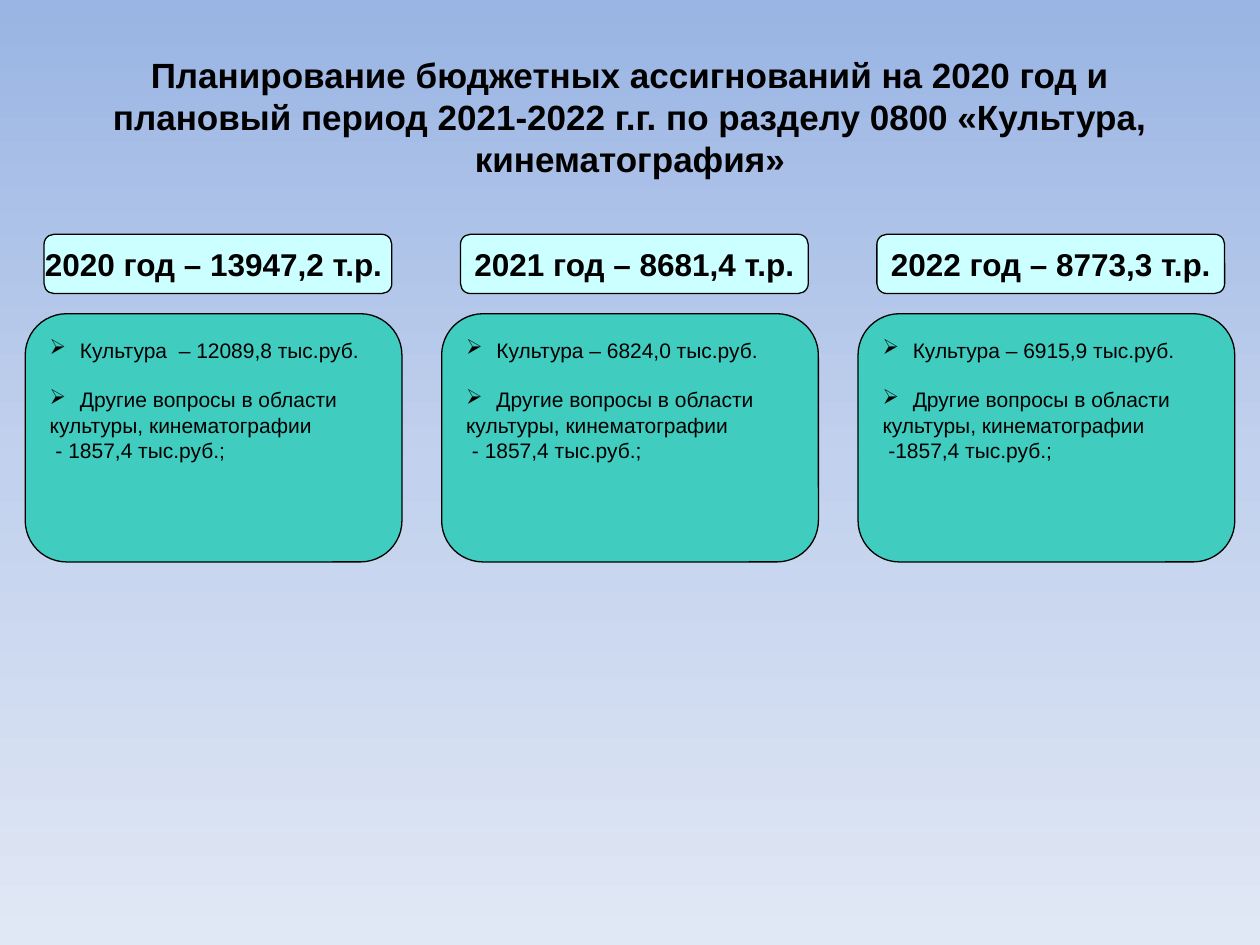
import copy

import pptx
import pptx.dml.color
import pptx.enum.shapes
import pptx.enum.text
import pptx.oxml
import pptx.oxml.ns
import pptx.util
from pptx.util import Inches

RGBColor = pptx.dml.color.RGBColor
BLACK = RGBColor(0x00, 0x00, 0x00)
PALE_CYAN = RGBColor(0xCC, 0xFF, 0xFF)
TEAL = RGBColor(0x40, 0xCC, 0xBF)
BACKGROUND_STOPS = [
    (0, RGBColor(0x9A, 0xB5, 0xE4)),
    (0.5, RGBColor(0xC2, 0xD1, 0xED)),
    (1, RGBColor(0xE1, 0xE8, 0xF5)),
]

FONT = "Arial"
ALIGN = pptx.enum.text.PP_ALIGN
ANCHOR = pptx.enum.text.MSO_ANCHOR
BULLET_INDENT = Inches(0.24)
COLUMN_LEFT = 0.2
COLUMN_STEP = 3.305

TITLE = ("Планирование бюджетных ассигнований на 2020 год и плановый период "
         "2021-2022 г.г. по разделу 0800 «Культура, кинематография»")
# Year heading, culture line, amount for other matters
YEARS = [
    ("2020 год – 13947,2 т.р. ", "Культура  – 12089,8 тыс.руб.", " - 1857,4 тыс.руб.;"),
    ("2021 год – 8681,4 т.р.", "Культура – 6824,0 тыс.руб.", " - 1857,4 тыс.руб.;"),
    ("2022 год – 8773,3 т.р.", "Культура – 6915,9 тыс.руб.", " -1857,4 тыс.руб.;"),
]


def set_background(slide):
    fill = slide.background.fill
    fill.gradient()
    fill.gradient_angle = 270
    stop_list = fill._fill._gradFill.gsLst
    stop_list.append(copy.deepcopy(stop_list[-1]))
    for stop, (position, color) in zip(fill.gradient_stops, BACKGROUND_STOPS):
        stop.position = position
        stop.color.rgb = color


def add_run(paragraph, text, size, bold=False):
    run = paragraph.add_run()
    run.text = text
    run.font.name = FONT
    run.font.size = pptx.util.Pt(size)
    run.font.bold = bold
    run.font.color.rgb = BLACK


def add_bullet(paragraph):
    properties = paragraph._p.get_or_add_pPr()
    properties.set("marL", str(BULLET_INDENT))
    properties.set("indent", str(-BULLET_INDENT))
    bullet = pptx.oxml.parse_xml(
        f'<a:buChar {pptx.oxml.ns.nsdecls("a")} char="➢"/>')
    properties.append(bullet)


def add_title(slide):
    box = slide.shapes.add_textbox(Inches(0.5), Inches(0.3), Inches(9), Inches(1.25))
    frame = box.text_frame
    frame.word_wrap = True
    frame.vertical_anchor = ANCHOR.MIDDLE
    paragraph = frame.paragraphs[0]
    paragraph.alignment = ALIGN.CENTER
    add_run(paragraph, TITLE, 20, bold=True)


def add_rounded_box(slide, left, top, width, height, color):
    shape = slide.shapes.add_shape(
        pptx.enum.shapes.MSO_SHAPE.ROUNDED_RECTANGLE,
        Inches(left), Inches(top), Inches(width), Inches(height))
    shape.shadow.inherit = False
    shape.fill.solid()
    shape.fill.fore_color.rgb = color
    shape.line.color.rgb = BLACK
    shape.line.width = pptx.util.Pt(0.75)
    return shape


def add_year_heading(slide, left, text):
    frame = add_rounded_box(slide, left, 1.86, 2.76, 0.47, PALE_CYAN).text_frame
    frame.word_wrap = False
    frame.vertical_anchor = ANCHOR.MIDDLE
    paragraph = frame.paragraphs[0]
    paragraph.alignment = ALIGN.CENTER
    add_run(paragraph, text, 18, bold=True)


def add_year_details(slide, left, culture, other_amount):
    frame = add_rounded_box(slide, left, 2.49, 2.99, 1.97, TEAL).text_frame
    frame.word_wrap = True
    frame.vertical_anchor = ANCHOR.TOP
    frame.margin_top = Inches(0.09)
    lines = [
        (culture, True),
        ("Другие вопросы в области", True),
        ("культуры, кинематографии", False),
        (other_amount, False),
    ]
    for index, (text, bulleted) in enumerate(lines):
        paragraph = frame.add_paragraph() if index else frame.paragraphs[0]
        paragraph.alignment = ALIGN.LEFT
        if index == 0:
            paragraph.space_after = pptx.util.Pt(14)
        if bulleted:
            add_bullet(paragraph)
        add_run(paragraph, text, 12)


def main():
    presentation = pptx.Presentation()
    presentation.slide_width = Inches(10)
    presentation.slide_height = Inches(7.5)
    slide = presentation.slides.add_slide(presentation.slide_layouts[6])
    set_background(slide)
    add_title(slide)
    for index, (heading, culture, other_amount) in enumerate(YEARS):
        left = COLUMN_LEFT + index * COLUMN_STEP
        add_year_heading(slide, left + 0.15, heading)
        add_year_details(slide, left, culture, other_amount)
    presentation.save("out.pptx")


if __name__ == "__main__":
    main()
